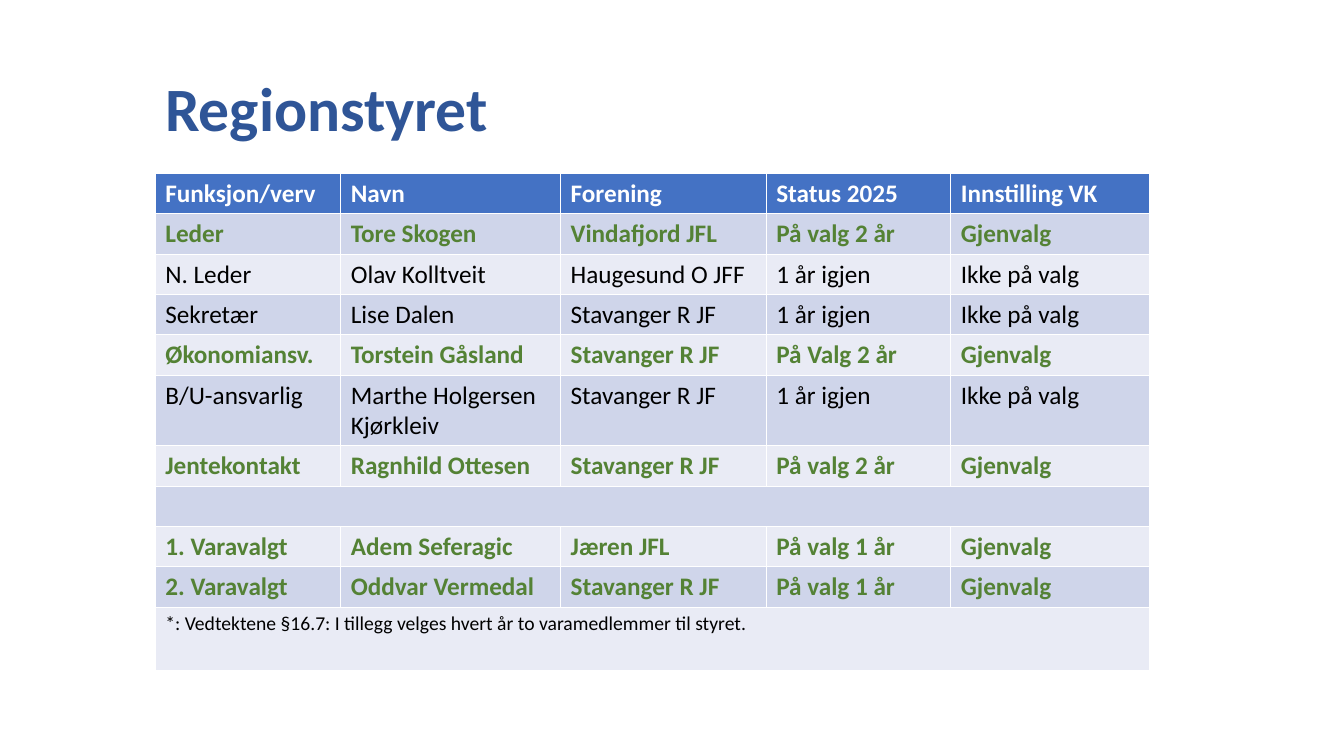
from pptx import Presentation, util as u
from pptx.dml.color import RGBColor
from pptx.enum import text

BLUE = RGBColor(0x2F, 0x55, 0x97)
HEADER = RGBColor(0x44, 0x72, 0xC4)
BANDS = RGBColor(0xE9, 0xEB, 0xF5), RGBColor(0xCF, 0xD5, 0xEA)
GREEN = RGBColor(0x54, 0x82, 0x35)
WHITE = RGBColor(0xFF, 0xFF, 0xFF)
BLACK = RGBColor(0, 0, 0)

LEFT, WIDTH = 1.54, 9.85
COLUMNS = [1.84, 2.18, 2.04, 1.83, 1.97]
ROW_HEIGHT, NOTE_HEIGHT = 0.4, 0.63
ELECTED, SITTING = "Gjenvalg", "Ikke på valg"
NOTE = "*: Vedtektene §16.7: I tillegg velges hvert år to varamedlemmer til styret."
ROWS = [
    ["Funksjon/verv", "Navn", "Forening", "Status 2025", "Innstilling VK"],
    ["Leder", "Tore Skogen", "Vindafjord JFL", "På valg 2 år", ELECTED],
    ["N. Leder", "Olav Kolltveit", "Haugesund O JFF", "1 år igjen", SITTING],
    ["Sekretær", "Lise Dalen", "Stavanger R JF", "1 år igjen", SITTING],
    ["Økonomiansv.", "Torstein Gåsland", "Stavanger R JF", "På Valg 2 år", ELECTED],
    ["B/U-ansvarlig", "Marthe Holgersen Kjørkleiv", "Stavanger R JF", "1 år igjen", SITTING],
    ["Jentekontakt", "Ragnhild Ottesen", "Stavanger R JF", "På valg 2 år", ELECTED],
    [""],
    ["1. Varavalgt", "Adem Seferagic", "Jæren JFL", "På valg 1 år", ELECTED],
    ["2. Varavalgt", "Oddvar Vermedal", "Stavanger R JF", "På valg 1 år", ELECTED],
    [NOTE],
]


class Deck:
    """Holds the font and the current slide, and adds elements to it."""

    def __init__(self, prs, font):
        self.font = font
        self.s = prs.slides.add_slide(prs.slide_layouts[6])

    def add_words(self, tf, words, size, color, bold):
        p = tf.paragraphs[0]
        r = p.add_run()
        r.text = words
        r.font.color.rgb = color
        style = {"name": self.font, "size": u.Pt(size), "bold": bold}
        for key, value in style.items():
            setattr(r.font, key, value)
        return p

    def title(self, words, x, y, w, h):
        sp = self.s.shapes.add_textbox(*map(u.Inches, (x, y, w, h)))
        frame = {"word_wrap": True, "vertical_anchor": text.MSO_ANCHOR.MIDDLE}
        for key, value in frame.items():
            setattr(sp.text_frame, key, value)
        p = self.add_words(sp.text_frame, words, 44, BLUE, True)
        p.line_spacing = 0.9

    def row_style(self, i, row):
        if i == 0:
            return 18, WHITE, True
        if row[-1] == ELECTED:
            return 18, GREEN, True
        return (14 if row[0] == NOTE else 18), BLACK, False

    def table(self, rows, x, y, w, h):
        sp = self.s.shapes.add_table(len(rows), len(COLUMNS), *map(u.Inches, (x, y, w, h)))
        tbl = sp.table
        for column, width in zip(tbl.columns, COLUMNS):
            column.width = u.Inches(width)
        for i, row in enumerate(rows):
            tbl.rows[i].height = u.Inches(NOTE_HEIGHT if row[0] == NOTE else ROW_HEIGHT)
            if len(row) == 1:
                tbl.cell(i, 0).merge(tbl.cell(i, len(COLUMNS) - 1))
            for j in range(len(COLUMNS)):
                cell = tbl.cell(i, j)
                cell.fill.solid()
                cell.fill.fore_color.rgb = BANDS[i % 2] if i else HEADER
                if j < len(row) and row[j]:
                    self.add_words(cell.text_frame, row[j], *self.row_style(i, row))


def main():
    prs = Presentation()
    prs.slide_width, prs.slide_height = u.Inches(13.33), u.Inches(7.5)
    deck = Deck(prs, "Calibri")
    deck.title("Regionstyret", LEFT, 0.38, WIDTH, 1.45)
    deck.table(ROWS, LEFT, 1.72, WIDTH, 4.98)
    prs.save("out.pptx")


if __name__ == "__main__":
    main()
